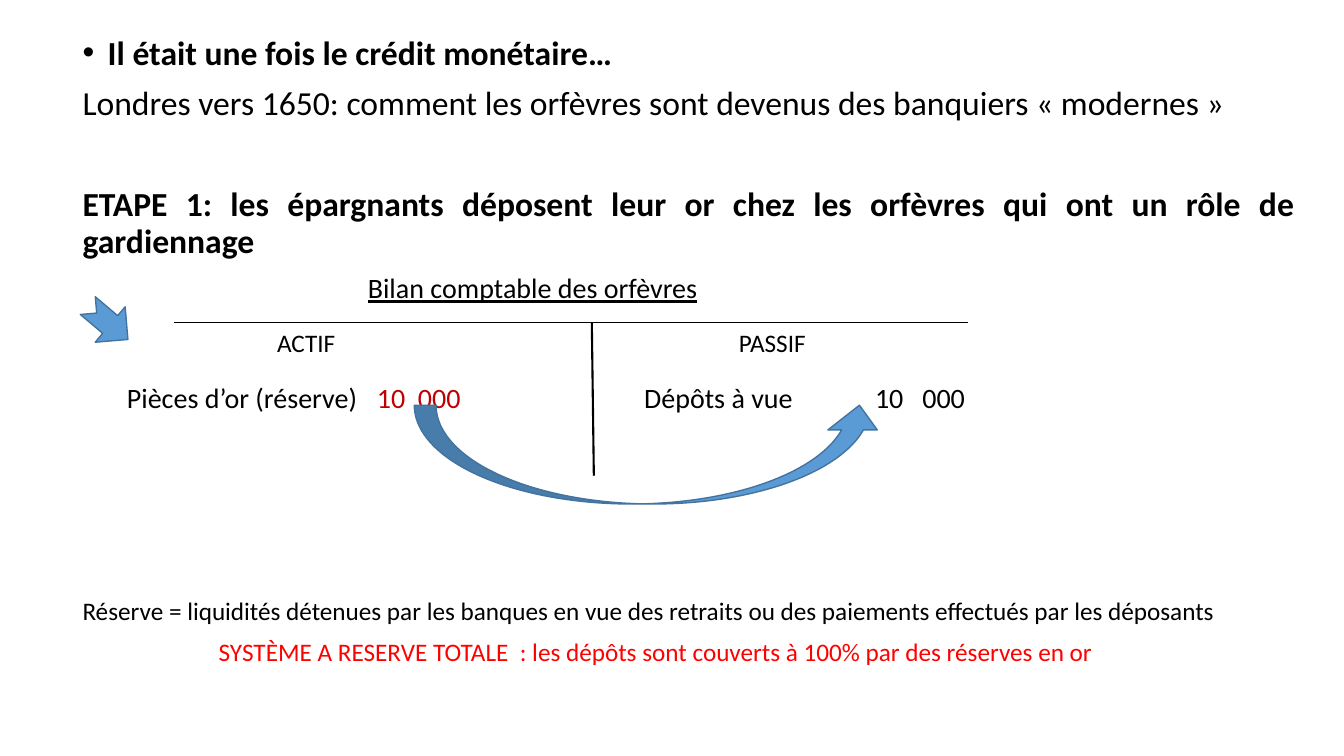
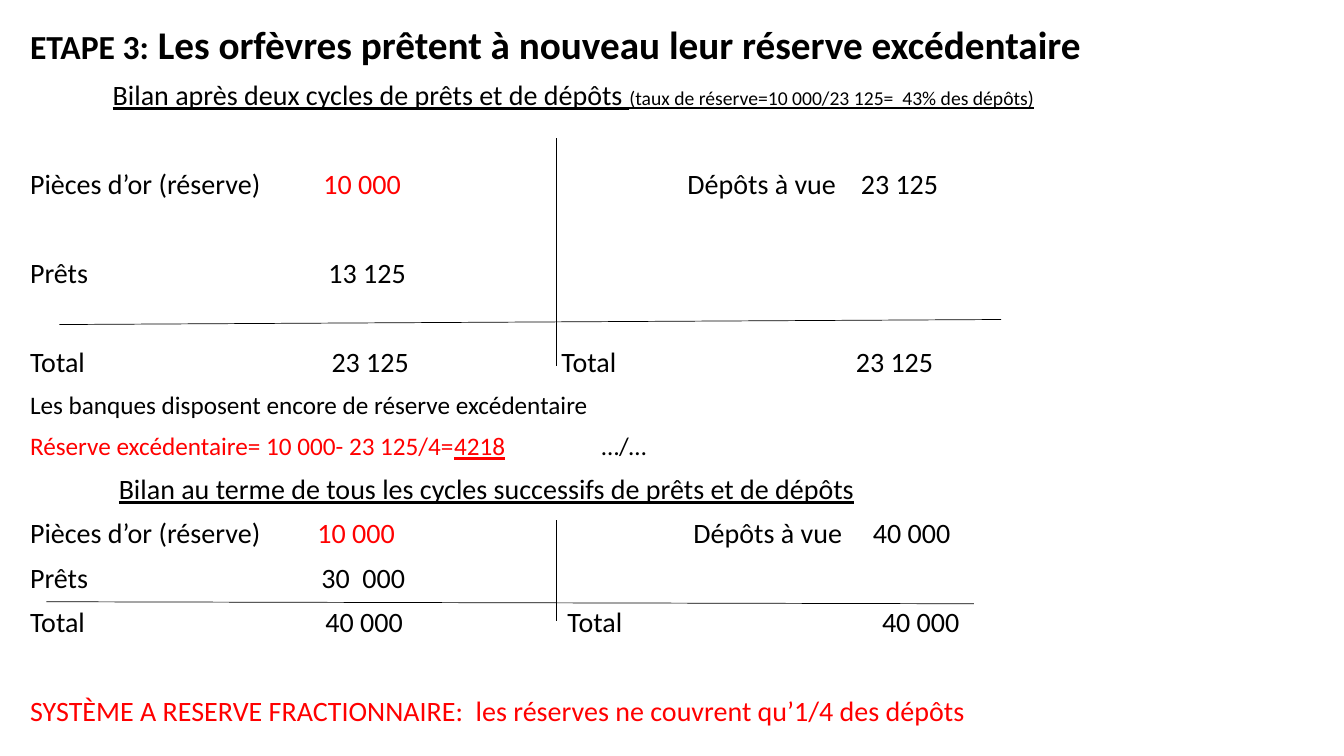
import pptx
import pptx.dml.color
import pptx.enum.shapes
import pptx.enum.text
import pptx.oxml.ns
import pptx.util
import lxml.etree

Inches = pptx.util.Inches
Pt = pptx.util.Pt
SHAPES = pptx.enum.shapes.MSO_SHAPE
ALIGN = pptx.enum.text.PP_ALIGN

BLACK, RED, DARK_RED = "000000", "FF0000", "C00000"
BLUE, BLUE_EDGE = "5B9BD5", "43739E"
GAP = 10
ROW_GAP = 42


def color(value):
    return pptx.dml.color.RGBColor.from_string(value)


def add_xml(parent, tag, **attributes):
    return lxml.etree.SubElement(parent, pptx.oxml.ns.qn(tag), attributes)


class Course:
    """Holds the deck style, the current slide and its body text."""

    font = "Calibri"

    def __init__(self):
        self.deck = pptx.Presentation()
        self.deck.slide_width = Inches(13.33)
        self.deck.slide_height = Inches(7.5)

    def page(self, left, top, width, height, align):
        self.slide = self.deck.slides.add_slide(self.deck.slide_layouts[6])
        box = self.slide.shapes.add_textbox(
            Inches(left), Inches(top), Inches(width), Inches(height))
        self.frame = box.text_frame
        self.frame.word_wrap = True
        self.align = align
        self.started = False

    def para(self, *spans, size=20, bold=False, ink=BLACK, before=GAP, tabs=(), bullet=False):
        para = self.frame.add_paragraph() if self.started else self.frame.paragraphs[0]
        self.started = True
        para.alignment = self.align
        para.line_spacing = 0.9
        para.space_before = Pt(before)
        properties = para._p.get_or_add_pPr()
        if bullet:
            properties.set("marL", str(Inches(0.25)))
            properties.set("indent", str(Inches(-0.25)))
            add_xml(properties, "a:buFont", typeface="Arial")
            add_xml(properties, "a:buChar", char="•")
        if tabs:
            stops = add_xml(properties, "a:tabLst")
            for stop in tabs:
                add_xml(stops, "a:tab", pos=str(Inches(stop)), algn="l")
        para.font.name = self.font
        para.font.size = Pt(size)
        para.font.bold = bold
        para.font.color.rgb = color(ink)
        for span in spans:
            text, style = (span, {}) if isinstance(span, str) else span
            run = para.add_run()
            run.text = text
            if "size" in style:
                run.font.size = Pt(style["size"])
            if "ink" in style:
                run.font.color.rgb = color(style["ink"])
            if "underline" in style:
                run.font.underline = style["underline"]

    def line(self, x1, y1, x2, y2, weight=0.5):
        line = self.slide.shapes.add_connector(
            pptx.enum.shapes.MSO_CONNECTOR.STRAIGHT,
            Inches(x1), Inches(y1), Inches(x2), Inches(y2))
        line.line.color.rgb = color(BLACK)
        line.line.width = Pt(weight)
        add_xml(line._element.spPr, "a:effectLst")

    def arrow(self, kind, left, top, width, height, rotation=0, adjustments=()):
        arrow = self.slide.shapes.add_shape(
            kind, Inches(left), Inches(top), Inches(width), Inches(height))
        arrow.shadow.inherit = False
        arrow.rotation = rotation
        for index, value in enumerate(adjustments):
            arrow.adjustments[index] = value
        arrow.fill.solid()
        arrow.fill.fore_color.rgb = color(BLUE)
        arrow.line.color.rgb = color(BLUE_EDGE)
        arrow.line.width = Pt(1)


def underlined(text, **style):
    return text, dict(style, underline=True)


def inked(text, ink):
    return text, {"ink": ink}


def deposit_slide(course):
    course.page(0.72, 0.31, 12.22, 6.99, ALIGN.JUSTIFY)
    course.para("Il était une fois le crédit monétaire…", size=24, bold=True, bullet=True)
    course.para("Londres vers 1650: comment les orfèvres sont devenus des banquiers "
                "«\u00a0modernes\u00a0»".replace("\u00a0", " "), size=24)
    course.para("ETAPE 1: les épargnants déposent leur or chez les orfèvres qui ont un rôle "
                "de gardiennage", size=24, bold=True, before=46.4)
    course.para("\t", underlined("Bilan comptable des orfèvres"), tabs=[2.83])
    course.para("\tACTIF\tPASSIF", size=18, before=18.5, tabs=[1.93, 6.51])
    course.para("\tPièces d’or (réserve)\t", inked("10  000", DARK_RED),
                "\tDépôts à vue\t10   000", before=19.3, tabs=[0.44, 2.92, 5.57, 7.86])
    course.para("Réserve = liquidités détenues par les banques en vue des retraits ou des "
                "paiements effectués par les déposants", size=18, before=131)
    course.para("\tSYSTÈME A RESERVE TOTALE  : les dépôts sont couverts à 100% par des "
                "réserves en or", size=18, ink=RED, tabs=[1.35])
    course.line(5.87, 3.2, 5.89, 4.72, weight=1.5)
    course.arrow(SHAPES.CURVED_UP_ARROW, 4.11, 4.02, 4.66, 0.98,
                 adjustments=[0.22, 0.5, 0.25])
    course.arrow(SHAPES.NOTCHED_RIGHT_ARROW, 0.81, 2.97, 0.52, 0.46, rotation=40.2)
    course.line(1.73, 3.2, 9.6, 3.2)


def loan_slide(course):
    course.page(0.2, 0.2, 12.86, 7.11, ALIGN.LEFT)
    course.para(("ETAPE 3:", {"size": 24}),
                " Les orfèvres prêtent à nouveau leur réserve excédentaire", size=28, bold=True)
    course.para("\t", underlined("Bilan après deux cycles de prêts et de dépôts "),
                underlined("(taux de réserve=10 000/23 125=  43% des dépôts)", size=14),
                tabs=[0.82])
    course.para("Pièces d’or (réserve)\t", inked("10 000", RED), "\tDépôts à vue\t23 125",
                before=ROW_GAP, tabs=[2.91, 6.52, 8.24])
    course.para("Prêts\t13 125", before=ROW_GAP, tabs=[2.96])
    course.para("Total\t23 125\tTotal\t23 125", before=ROW_GAP, tabs=[2.99, 5.27, 8.19])
    course.para("Les banques disposent encore de réserve excédentaire", size=18)
    course.para("Réserve excédentaire= 10 000- 23 125/4=", underlined("4218"),
                inked("\t…/…", BLACK), size=18, ink=RED, tabs=[5.67])
    course.para("\t", underlined("Bilan au terme de tous les cycles successifs de prêts "
                                 "et de dépôts"), tabs=[0.88])
    course.para("Pièces d’or (réserve)\t", inked("10 000", RED), "\tDépôts à vue\t40 000",
                tabs=[2.85, 6.58, 8.36])
    course.para("Prêts\t30  000", tabs=[2.89])
    course.para("Total\t40 000\tTotal\t40 000", tabs=[2.93, 5.33, 8.45])
    course.para("SYSTÈME A RESERVE FRACTIONNAIRE:  les réserves ne couvrent qu’1/4 des dépôts",
                ink=RED, before=ROW_GAP)
    course.line(5.52, 1.37, 5.52, 3.63)
    course.line(0.59, 3.22, 9.93, 3.17)
    course.line(5.52, 5.16, 5.52, 6.16)
    course.line(0.46, 5.97, 9.66, 5.99)


def main():
    course = Course()
    deposit_slide(course)
    loan_slide(course)
    course.deck.save("out.pptx")


if __name__ == "__main__":
    main()
